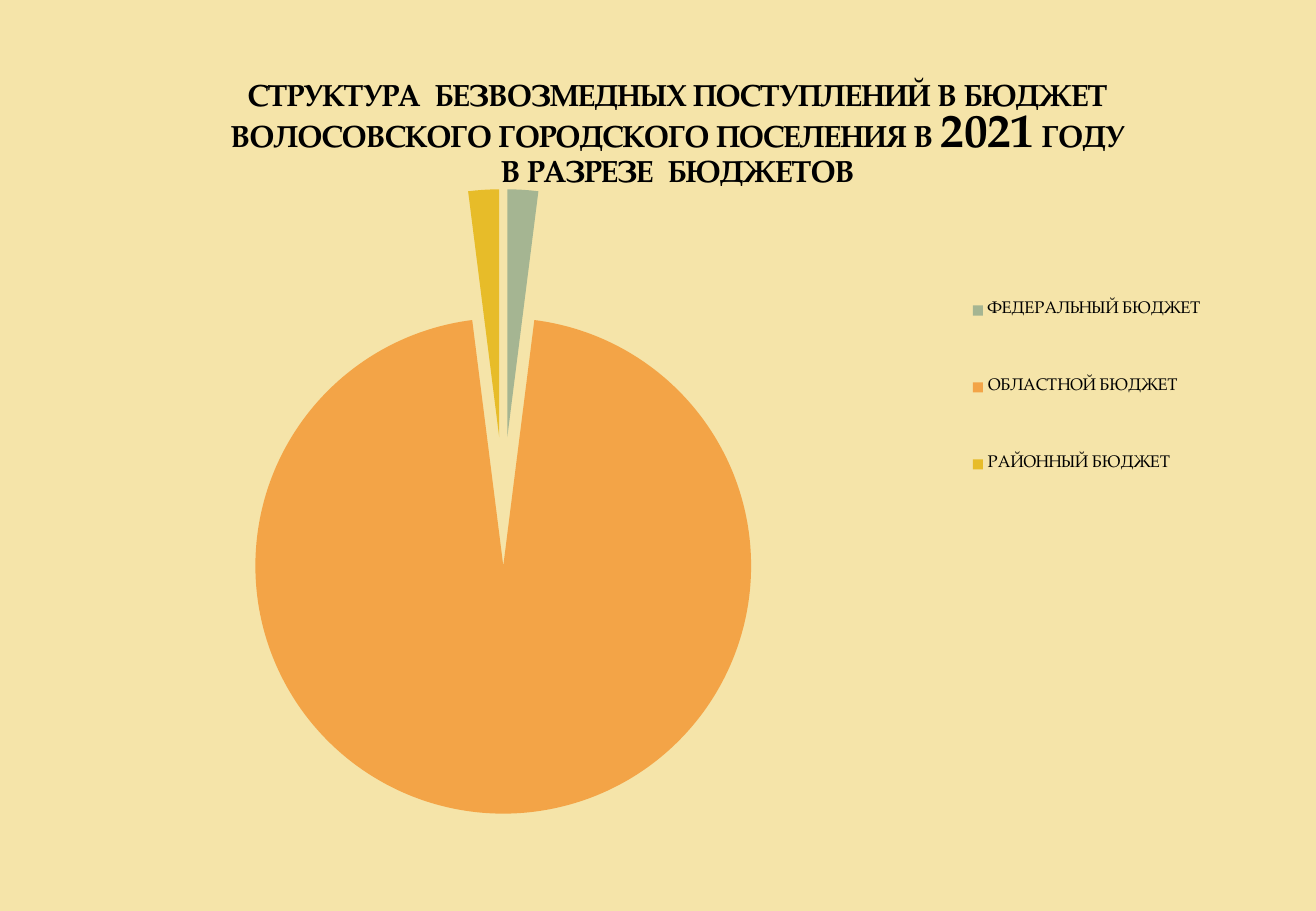
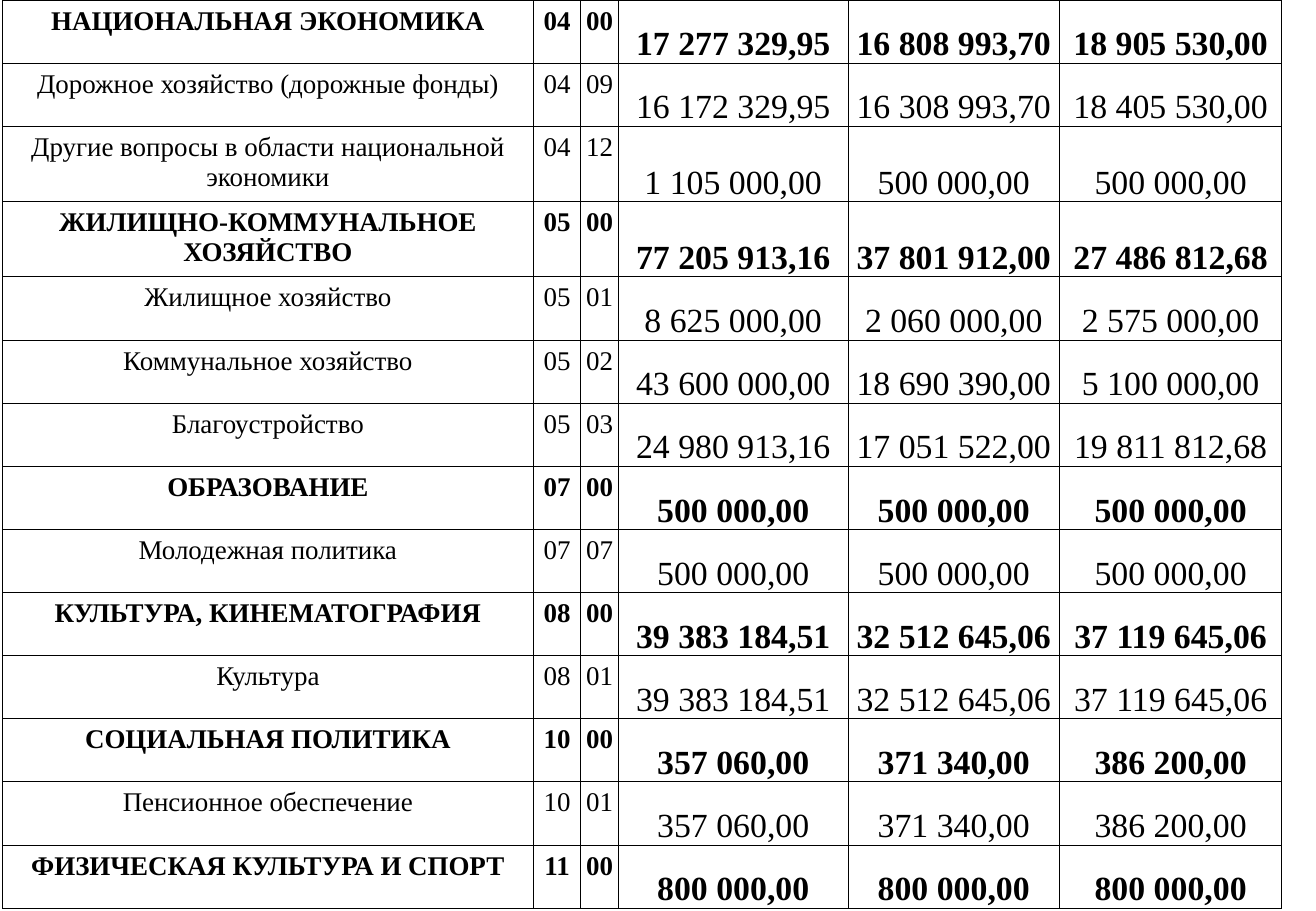
from dataclasses import dataclass

from lxml import etree
from pptx import Presentation
from pptx import util as u
from pptx.chart.data import CategoryChartData
from pptx.dml.color import RGBColor
from pptx.enum import chart as ch, text
from pptx.oxml.ns import qn


@dataclass(frozen=True)
class Theme:
    """Colours, fonts and type sizes of the deck."""
    sand: str = "F5E4A9"
    white: str = "FFFFFF"
    ink: str = "000000"
    slices: tuple = ("A5B592", "F3A447", "E7BC29")
    display: str = "TeX Gyre Pagella"
    chart: str = "Arial"
    table: str = "Times New Roman"
    legend_size: int = 10
    title_size: int = 18
    year_size: int = 28
    label_size: int = 16
    amount_size: int = 20
    rule: float = 0.5


THEME = Theme()
WIDTH, HEIGHT = 10.83, 7.5
EXPLOSION = 26
PLOT_AREA = (0.01, 0.165, 0.678, 0.772)
LEGEND_AREA = (0.74, 0.23, 0.23, 0.36)
BUDGETS = {"ФЕДЕРАЛЬНЫЙ БЮДЖЕТ": 2, "ОБЛАСТНОЙ БЮДЖЕТ": 96, "РАЙОННЫЙ БЮДЖЕТ": 2}
TITLE_LINES = (
    (("СТРУКТУРА  БЕЗВОЗМЕДНЫХ ПОСТУПЛЕНИЙ В БЮДЖЕТ", THEME.title_size),),
    (("ВОЛОСОВСКОГО ГОРОДСКОГО ПОСЕЛЕНИЯ В ", THEME.title_size),
     ("2021", THEME.year_size), (" ГОДУ", THEME.title_size)),
    (("В РАЗРЕЗЕ  БЮДЖЕТОВ", THEME.title_size),),
)
COLUMNS = (4.37, 0.39, 0.31, 1.89, 1.74, 1.83)
CODE_COLUMNS = 3
ROW, TALL_ROW = 0.52, 0.62
TALL_ROWS = (2, 3)
EXPENSES = (
    ("НАЦИОНАЛЬНАЯ ЭКОНОМИКА", "04", "00", "17 277 329,95", "16 808 993,70", "18 905 530,00"),
    ("Дорожное хозяйство (дорожные фонды)", "04", "09", "16 172 329,95", "16 308 993,70", "18 405 530,00"),
    ("Другие вопросы в области национальной экономики", "04", "12", "1 105 000,00", "500 000,00", "500 000,00"),
    ("ЖИЛИЩНО-КОММУНАЛЬНОЕ ХОЗЯЙСТВО", "05", "00", "77 205 913,16", "37 801 912,00", "27 486 812,68"),
    ("Жилищное хозяйство", "05", "01", "8 625 000,00", "2 060 000,00", "2 575 000,00"),
    ("Коммунальное хозяйство", "05", "02", "43 600 000,00", "18 690 390,00", "5 100 000,00"),
    ("Благоустройство", "05", "03", "24 980 913,16", "17 051 522,00", "19 811 812,68"),
    ("ОБРАЗОВАНИЕ", "07", "00", "500 000,00", "500 000,00", "500 000,00"),
    ("Молодежная политика", "07", "07", "500 000,00", "500 000,00", "500 000,00"),
    ("КУЛЬТУРА, КИНЕМАТОГРАФИЯ", "08", "00", "39 383 184,51", "32 512 645,06", "37 119 645,06"),
    ("Культура", "08", "01", "39 383 184,51", "32 512 645,06", "37 119 645,06"),
    ("СОЦИАЛЬНАЯ ПОЛИТИКА", "10", "00", "357 060,00", "371 340,00", "386 200,00"),
    ("Пенсионное обеспечение", "10", "01", "357 060,00", "371 340,00", "386 200,00"),
    ("ФИЗИЧЕСКАЯ КУЛЬТУРА И СПОРТ", "11", "00", "800 000,00", "800 000,00", "800 000,00"),
)


def style_font(font, *, face, size, bold=False):
    """Give a font its face, size, weight and the ink colour."""
    font.name, font.size, font.bold = face, u.Pt(size), bold
    font.color.rgb = RGBColor.from_string(THEME.ink)


def add_text(paragraph, words, **style):
    """Append one formatted run to a centred paragraph."""
    paragraph.alignment = text.PP_ALIGN.CENTER
    run = paragraph.add_run()
    run.text = words
    style_font(run.font, **style)


def add_slide(deck, background):
    """Add a blank slide with a plain background."""
    slide = deck.slides.add_slide(deck.slide_layouts[6])
    slide.background.fill.solid()
    slide.background.fill.fore_color.rgb = RGBColor.from_string(background)
    return slide


def place_in_chart(part, index, area, inner=False):
    """Fix a chart part at x, y, width and height shares of the chart."""
    for old in part.findall(qn("c:layout")):
        part.remove(old)
    layout = etree.Element(qn("c:layout"))
    manual = etree.SubElement(layout, qn("c:manualLayout"))
    settings = [("layoutTarget", "inner")] if inner else []
    settings += [("xMode", "edge"), ("yMode", "edge"), *zip("xywh", area)]
    for tag, value in settings:
        etree.SubElement(manual, qn(f"c:{tag}"), val=str(value))
    part.insert(index, layout)


def write_chart_title(chart):
    """Write the three-line chart title with its enlarged year."""
    chart.has_title = True
    heading = chart.chart_title.text_frame.paragraphs[0]
    for number, line in enumerate(TITLE_LINES):
        if number:
            heading.add_line_break()
        for words, size in line:
            add_text(heading, words, face=THEME.display, size=size, bold=True)
    chart.chart_title.include_in_layout = False


def add_budget_pie(slide):
    """Add the exploded pie of receipts by budget."""
    shares = CategoryChartData()
    shares.categories = list(BUDGETS)
    shares.add_series("Series 1", list(BUDGETS.values()))
    chart = slide.shapes.add_chart(
        ch.XL_CHART_TYPE.PIE, u.Inches(0.83), u.Inches(0.46),
        u.Inches(9.49), u.Inches(6.66), shares).chart
    style_font(chart.font, face=THEME.chart, size=THEME.legend_size)
    write_chart_title(chart)

    pie = chart.plots[0]
    pie.vary_by_categories = True
    pie.has_data_labels = False
    receipts = pie.series[0]
    explosion = etree.Element(qn("c:explosion"), val=str(EXPLOSION))
    receipts._element.find(qn("c:tx")).addnext(explosion)
    for number, colour in enumerate(THEME.slices):
        fill = receipts.points[number].format.fill
        fill.solid()
        fill.fore_color.rgb = RGBColor.from_string(colour)
        etree.SubElement(explosion.getparent().findall(qn("c:dPt"))[number],
                         qn("c:explosion"), val=str(EXPLOSION))
        point = explosion.getparent().findall(qn("c:dPt"))[number]
        point.find(qn("c:spPr")).addprevious(point.find(qn("c:explosion")))

    chart.has_legend = True
    legend = chart.legend
    legend.position = ch.XL_LEGEND_POSITION.RIGHT
    legend.include_in_layout = False
    style_font(legend.font, face=THEME.display, size=THEME.legend_size)
    place_in_chart(legend._element, 1, LEGEND_AREA)
    place_in_chart(chart._chartSpace.chart.plotArea, 0, PLOT_AREA, inner=True)


def rule_cell(cell):
    """Draw thin rules on all four sides of a cell."""
    properties = cell._tc.get_or_add_tcPr()
    for index, side in enumerate(("lnL", "lnR", "lnT", "lnB")):
        line = etree.Element(qn(f"a:{side}"), w=str(u.Pt(THEME.rule)))
        fill = etree.SubElement(line, qn("a:solidFill"))
        etree.SubElement(fill, qn("a:srgbClr"), val=THEME.ink)
        properties.insert(index, line)


def fill_cell(cell, words, *, amount, bold):
    """Fill a cell as a heading or code, or as a bottom-aligned amount."""
    cell.fill.background()
    cell.margin_left = cell.margin_right = u.Inches(0.01)
    cell.margin_top = u.Inches(0.01 if amount else 0.05)
    cell.margin_bottom = u.Inches(0 if amount else 0.05)
    cell.vertical_anchor = text.MSO_ANCHOR.BOTTOM if amount else text.MSO_ANCHOR.TOP
    add_text(cell.text_frame.paragraphs[0], words, face=THEME.table, bold=bold,
             size=THEME.amount_size if amount else THEME.label_size)
    rule_cell(cell)


def add_expense_table(slide):
    """Add the expense table, with the section totals in bold."""
    heights = [TALL_ROW if row in TALL_ROWS else ROW for row in range(len(EXPENSES))]
    table = slide.shapes.add_table(
        len(EXPENSES), len(COLUMNS), u.Inches(0.02), 0,
        u.Inches(sum(COLUMNS)), u.Inches(sum(heights))).table
    table.first_row = table.horz_banding = False
    for column, width in zip(table.columns, COLUMNS):
        column.width = u.Inches(width)
    for number, (height, expense) in enumerate(zip(heights, EXPENSES)):
        table.rows[number].height = u.Inches(height)
        for column, words in enumerate(expense):
            fill_cell(table.cell(number, column), words,
                      amount=column >= CODE_COLUMNS, bold=expense[2] == "00")


def main():
    """Build and save the deck."""
    deck = Presentation()
    deck.slide_width, deck.slide_height = u.Inches(WIDTH), u.Inches(HEIGHT)
    add_budget_pie(add_slide(deck, THEME.sand))
    add_expense_table(add_slide(deck, THEME.white))
    deck.save("out.pptx")


if __name__ == "__main__":
    main()
